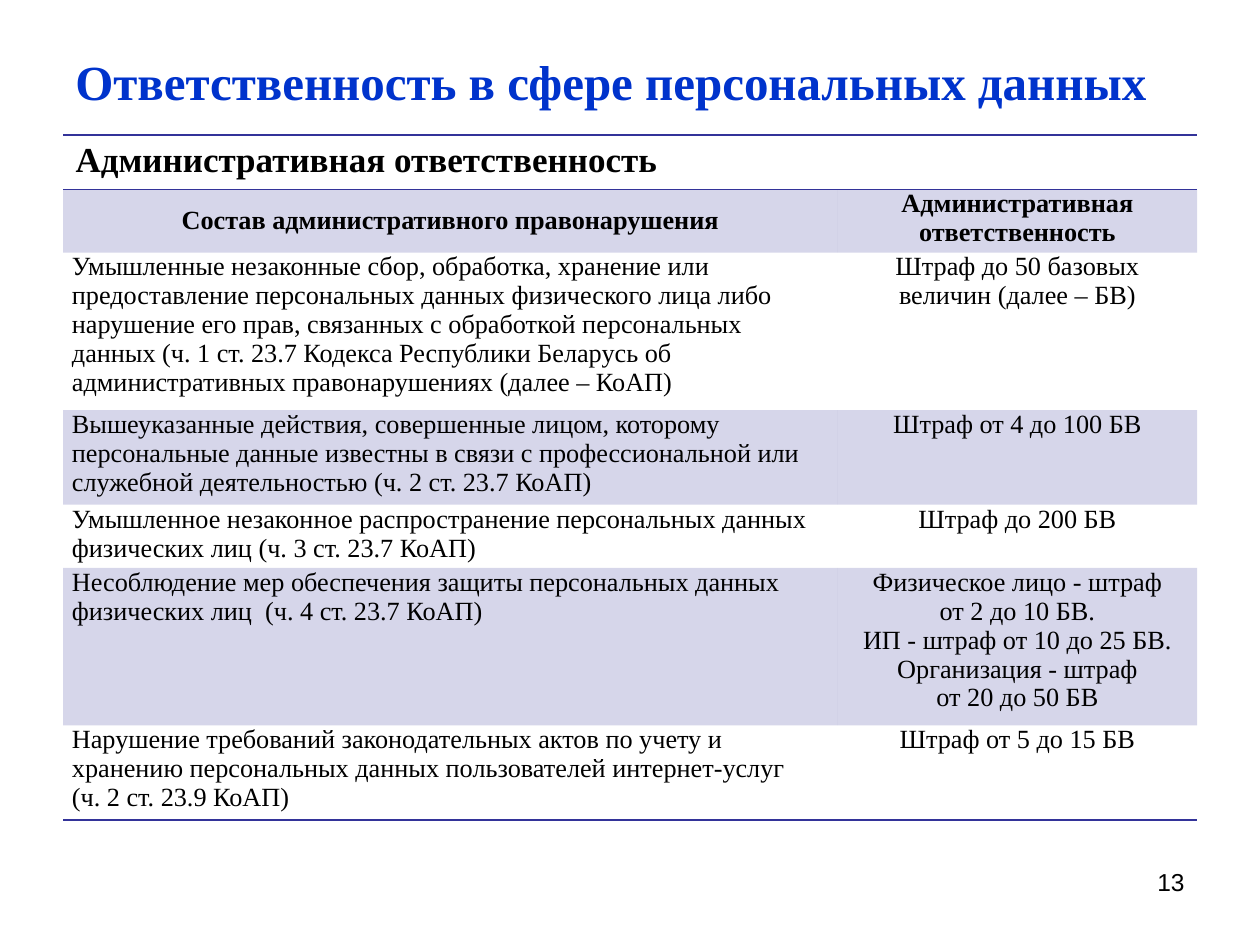
from lxml import etree
from pptx import Presentation
from pptx import util as u
from pptx.dml.color import RGBColor
from pptx.enum import text
from pptx.oxml import ns

SERIF = "Times New Roman"
INK, ACCENT, TITLE_BLUE = "000000", "333399", "0033CC"
NO_STYLE = "{2D5ABB26-0587-4C30-8999-92F81FD0307C}"
COLUMNS = [15.62, 7.24]
ROWS = [1, 1.22, 3.07, 1.83, 1.22, 3.05, 1.83]
LEFT, CENTER, RIGHT = text.PP_ALIGN.LEFT, text.PP_ALIGN.CENTER, text.PP_ALIGN.RIGHT

SECTION = "Административная ответственность"
HEADINGS = ("Состав административного правонарушения", "Административная ответственность")
OFFENCES = [
    (["Умышленные незаконные сбор, обработка, хранение или предоставление персональных "
      "данных физического лица либо нарушение его прав, связанных с обработкой "
      "персональных данных (ч. 1 ст. 23.7 Кодекса Республики Беларусь об "
      "административных правонарушениях (далее – КоАП)"],
     ["Штраф до 50 базовых величин (далее – БВ)"]),
    (["Вышеуказанные действия, совершенные лицом, которому персональные данные известны "
      "в связи с профессиональной или служебной деятельностью (ч. 2 ст. 23.7 КоАП)"],
     ["Штраф от 4 до 100 БВ"]),
    (["Умышленное незаконное распространение персональных данных физических лиц "
      "(ч. 3 ст. 23.7 КоАП)"],
     ["Штраф до 200 БВ"]),
    (["Несоблюдение мер обеспечения защиты персональных данных физических лиц  "
      "(ч. 4 ст. 23.7 КоАП)"],
     ["Физическое лицо - штраф", "от 2 до 10 БВ.", "ИП - штраф от 10 до 25 БВ.",
      "Организация - штраф", "от 20 до 50 БВ"]),
    (["Нарушение требований законодательных актов по учету и хранению персональных "
      "данных пользователей интернет-услуг", "(ч. 2 ст. 23.9 КоАП)"],
     ["Штраф от 5 до 15 БВ"]),
]


def color(value):
    """Turn a hex string into a colour."""
    return RGBColor.from_string(value)


def write(frame, lines, size, font=SERIF, ink=INK, bold=False, align=LEFT):
    """Write one paragraph per line into a text frame."""
    for index, line in enumerate(lines):
        paragraph = frame.add_paragraph() if index else frame.paragraphs[0]
        paragraph.alignment = align
        run = paragraph.add_run()
        run.text = line
        run.font.size = u.Pt(size)
        run.font.name = font
        run.font.bold = bold
        run.font.color.rgb = color(ink)


def add_label(slide, box, line, anchor=text.MSO_ANCHOR.TOP, **style):
    """Place one wrapped line of text in the box."""
    frame = slide.shapes.add_textbox(*map(u.Cm, box)).text_frame
    frame.word_wrap = True
    frame.vertical_anchor = anchor
    write(frame, [line], **style)


def tint(cell):
    """Fill a cell with the accent colour at one fifth opacity."""
    cell.fill.solid()
    cell.fill.fore_color.rgb = color(ACCENT)
    shade = cell._tc.tcPr.find(".//" + ns.qn("a:srgbClr"))
    etree.SubElement(shade, ns.qn("a:alpha"), val="20000")


def rule(cell, sides):
    """Draw accent lines on the given sides, listed in schema order."""
    for index, side in enumerate(sides):
        line = etree.Element(ns.qn("a:ln" + side), w=str(u.Pt(1)))
        fill = etree.SubElement(line, ns.qn("a:solidFill"))
        etree.SubElement(fill, ns.qn("a:srgbClr"), val=ACCENT)
        cell._tc.get_or_add_tcPr().insert(index, line)


def fill_cell(cell, lines, shaded, **style):
    """Write a body cell with tight margins and an optional tint."""
    cell.margin_left = cell.margin_right = u.Cm(0.18)
    cell.margin_top = cell.margin_bottom = 0
    if shaded:
        tint(cell)
    else:
        cell.fill.background()
    write(cell.text_frame, lines, 15, **style)


def add_penalties(slide, left, top):
    """Build the table of offences and fines from its top left corner."""
    frame = slide.shapes.add_table(len(ROWS), len(COLUMNS), u.Cm(left), u.Cm(top),
                                   u.Cm(sum(COLUMNS)), u.Cm(sum(ROWS)))
    table = frame.table
    table._tbl.tblPr.find(ns.qn("a:tableStyleId")).text = NO_STYLE
    table.first_row = table.horz_banding = False
    for column, width in zip(table.columns, COLUMNS):
        column.width = u.Cm(width)
    for row, height in zip(table.rows, ROWS):
        row.height = u.Cm(height)

    section = table.cell(0, 0)
    section.merge(table.cell(0, 1))
    write(section.text_frame, [SECTION], 20, bold=True)
    for column in range(len(COLUMNS)):
        table.cell(0, column).fill.background()
        rule(table.cell(0, column), "TB")
        fill_cell(table.cell(1, column), [HEADINGS[column]], True, bold=True, align=CENTER)
    table.cell(1, 0).vertical_anchor = text.MSO_ANCHOR.MIDDLE

    for row, (offence, fine) in enumerate(OFFENCES, start=2):
        fill_cell(table.cell(row, 0), offence, row % 2 == 1)
        fill_cell(table.cell(row, 1), fine, row % 2 == 1, align=CENTER)
    for column in range(len(COLUMNS)):
        rule(table.cell(len(ROWS) - 1, column), "B")


def main():
    """Build and save the slide."""
    deck = Presentation()
    deck.slide_width, deck.slide_height = u.Cm(25.4), u.Cm(19.05)
    slide = deck.slides.add_slide(deck.slide_layouts[6])
    add_label(slide, (1.27, 0.76, 22.86, 1.75), "Ответственность в сфере персональных данных",
              text.MSO_ANCHOR.MIDDLE, size=28, ink=TITLE_BLUE, bold=True)
    add_penalties(slide, 1.27, 2.72)
    add_label(slide, (18.2, 17.35, 5.93, 1.32), "13", size=14, font="Arial", align=RIGHT)
    deck.save("out.pptx")


if __name__ == "__main__":
    main()
